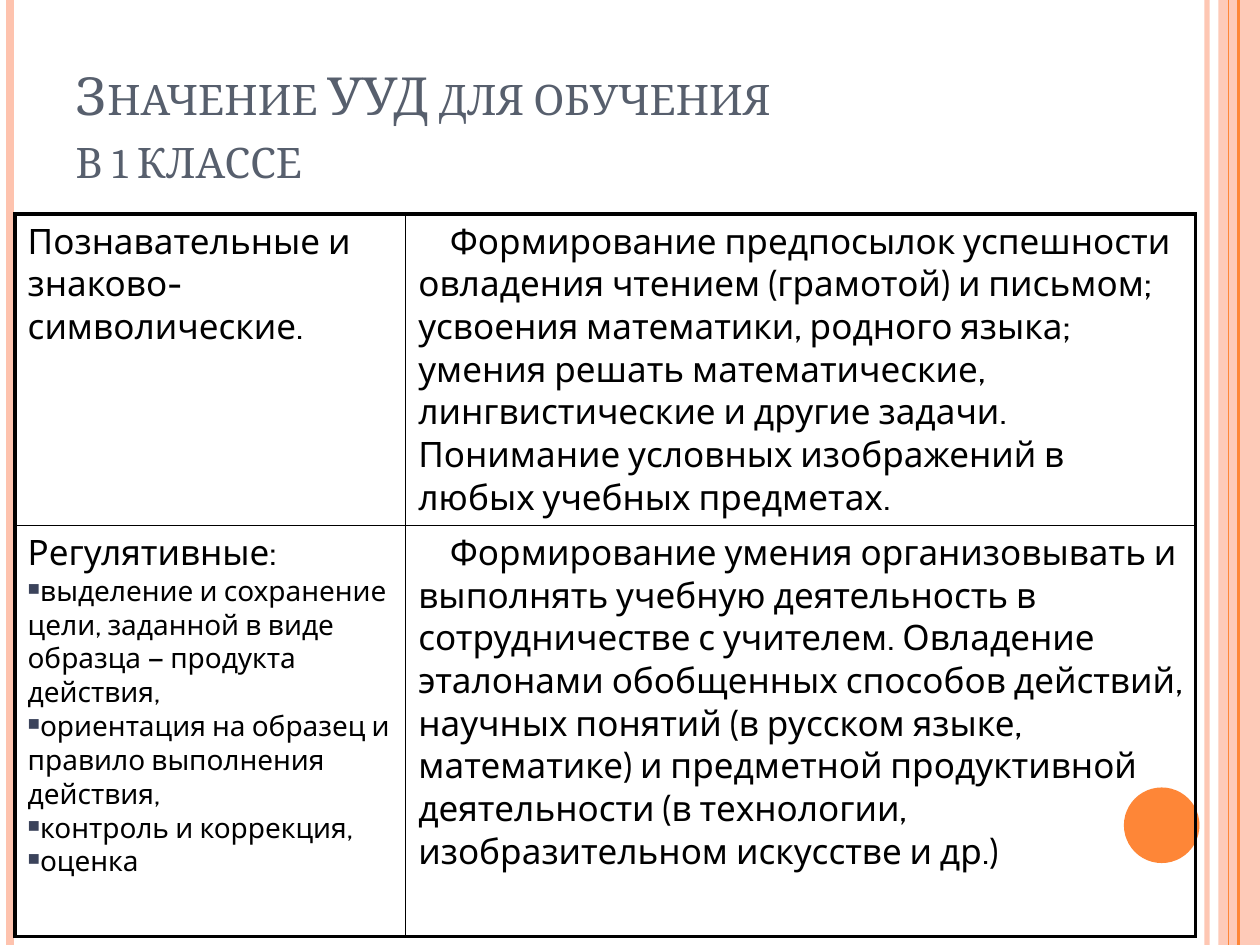
from lxml.etree import SubElement
from pptx import Presentation
from pptx.dml.color import RGBColor
from pptx.enum.shapes import MSO_CONNECTOR, MSO_SHAPE
from pptx.enum.text import MSO_ANCHOR, MSO_AUTO_SIZE, PP_ALIGN
from pptx.oxml.ns import qn
from pptx.util import Inches, Pt

COLORS = {"peach": "FEC3AE", "orange": "FE8637", "title": "575F6D",
          "text": "000000", "bullet": "3B435B", "border": "000000"}
TITLE = "Значение УУД для обучения\vв 1 классе"
SKILLS = [
    ("Познавательные и знаково-символические.", [],
     "Формирование предпосылок успешности овладения чтением (грамотой) и письмом; "
     "усвоения математики, родного языка; умения решать математические, "
     "лингвистические и другие задачи. Понимание условных изображений в любых "
     "учебных предметах."),
    ("Регулятивные:",
     ["выделение и сохранение цели, заданной в виде образца — продукта действия,",
      "ориентация на образец и правило выполнения действия,",
      "контроль и коррекция,",
      "оценка"],
     "Формирование умения организовывать и выполнять учебную деятельность в "
     "сотрудничестве с учителем. Овладение эталонами обобщенных способов действий, "
     "научных понятий (в русском языке, математике) и предметной продуктивной "
     "деятельности (в технологии, изобразительном искусстве и др.)"),
]
STRIPES = [(9.58, "peach", 3, 93), (0.08, "peach", 4.5, 100),
           (9.83, "orange", 1.5, 100), (9.75, "orange", 0.75, 100)]
COLUMN_WIDTHS = [3.1, 6.27]
ROW_HEIGHTS = [2.41, 3.26]
OUTER, INNER = 2.25, 1


def rgb(name):
    return RGBColor.from_string(COLORS[name])


def set_alpha(element, percent):
    if percent < 100:
        color = next(element.iter(qn("a:srgbClr")))
        SubElement(color, qn("a:alpha"), val=str(percent * 1000))


def add_stripe(slide, x, color, width, opacity):
    stripe = slide.shapes.add_connector(
        MSO_CONNECTOR.STRAIGHT, Inches(x), 0, Inches(x), Inches(7.5))
    stripe.line.color.rgb = rgb(color)
    stripe.line.width = Pt(width)
    properties = stripe._element.spPr
    set_alpha(properties, opacity)
    SubElement(properties, qn("a:effectLst"))


def add_ornament(slide, preset, box, color, opacity=100):
    ornament = slide.shapes.add_shape(preset, *map(Inches, box))
    ornament.shadow.inherit = False
    ornament.fill.solid()
    ornament.fill.fore_color.rgb = rgb(color)
    ornament.line.fill.background()
    set_alpha(ornament._element.spPr, opacity)


def write(paragraph, text, size=20, font="Cabin", color="text",
          small_caps=False, bullet=False, indent=0):
    paragraph.text = text
    paragraph.alignment = PP_ALIGN.LEFT
    for run in paragraph.runs:
        run.font.size = Pt(size)
        run.font.name = font
        run.font.color.rgb = rgb(color)
        if small_caps:
            run.font._element.set("cap", "small")
    properties = paragraph._p.get_or_add_pPr()
    if indent:
        properties.set("marL", "0")
        properties.set("indent", str(Inches(indent)))
    if bullet:
        bullet_color = SubElement(properties, qn("a:buClr"))
        SubElement(bullet_color, qn("a:srgbClr"), val=COLORS["bullet"])
        SubElement(properties, qn("a:buSzPct"), val="60000")
        SubElement(properties, qn("a:buChar"), char="■")


def set_borders(cell, widths):
    properties = cell._tc.get_or_add_tcPr()
    for side, width in zip("LRTB", widths):
        border = SubElement(properties, qn(f"a:ln{side}"), w=str(Pt(width)))
        fill = SubElement(border, qn("a:solidFill"))
        SubElement(fill, qn("a:srgbClr"), val=COLORS["border"])


def add_skills_table(slide):
    rows, columns = len(ROW_HEIGHTS), len(COLUMN_WIDTHS)
    table = slide.shapes.add_table(
        rows, columns, Inches(0.12), Inches(1.7),
        Inches(sum(COLUMN_WIDTHS)), Inches(sum(ROW_HEIGHTS))).table
    table.first_row = table.horz_banding = False
    for column, width in zip(table.columns, COLUMN_WIDTHS):
        column.width = Inches(width)
    for row, height in zip(table.rows, ROW_HEIGHTS):
        row.height = Inches(height)
    for r, (skill, details, meaning) in enumerate(SKILLS):
        skill_cell, meaning_cell = table.cell(r, 0), table.cell(r, 1)
        write(skill_cell.text_frame.paragraphs[0], skill)
        for detail in details:
            write(skill_cell.text_frame.add_paragraph(), detail, size=16, bullet=True)
        write(meaning_cell.text_frame.paragraphs[0], meaning, indent=0.25)
        for c, cell in enumerate((skill_cell, meaning_cell)):
            on_edge = (c == 0, c == columns - 1, r == 0, r == rows - 1)
            set_borders(cell, [OUTER if edge else INNER for edge in on_edge])
            cell.fill.background()


def main():
    """Build the slide on what learning skills mean for first-grade study."""
    deck = Presentation()
    deck.slide_width, deck.slide_height = Inches(10), Inches(7.5)
    slide = deck.slides.add_slide(deck.slide_layouts[5])
    add_ornament(slide, MSO_SHAPE.RECTANGLE, (9.67, 0, 0.33, 7.5), "peach", 87)
    for stripe in STRIPES:
        add_stripe(slide, *stripe)
    add_ornament(slide, MSO_SHAPE.OVAL, (8.92, 6.25, 0.6, 0.6), "orange")

    title = slide.shapes.title
    title.left, title.top, title.width, title.height = map(
        Inches, (0.5, 0.3, 8.17, 1.25))
    title.text_frame.auto_size = MSO_AUTO_SIZE.NONE
    title.text_frame.vertical_anchor = MSO_ANCHOR.BOTTOM
    write(title.text_frame.paragraphs[0], TITLE, size=30, font="Cambria",
          color="title", small_caps=True)
    add_skills_table(slide)
    deck.save("out.pptx")


if __name__ == "__main__":
    main()
